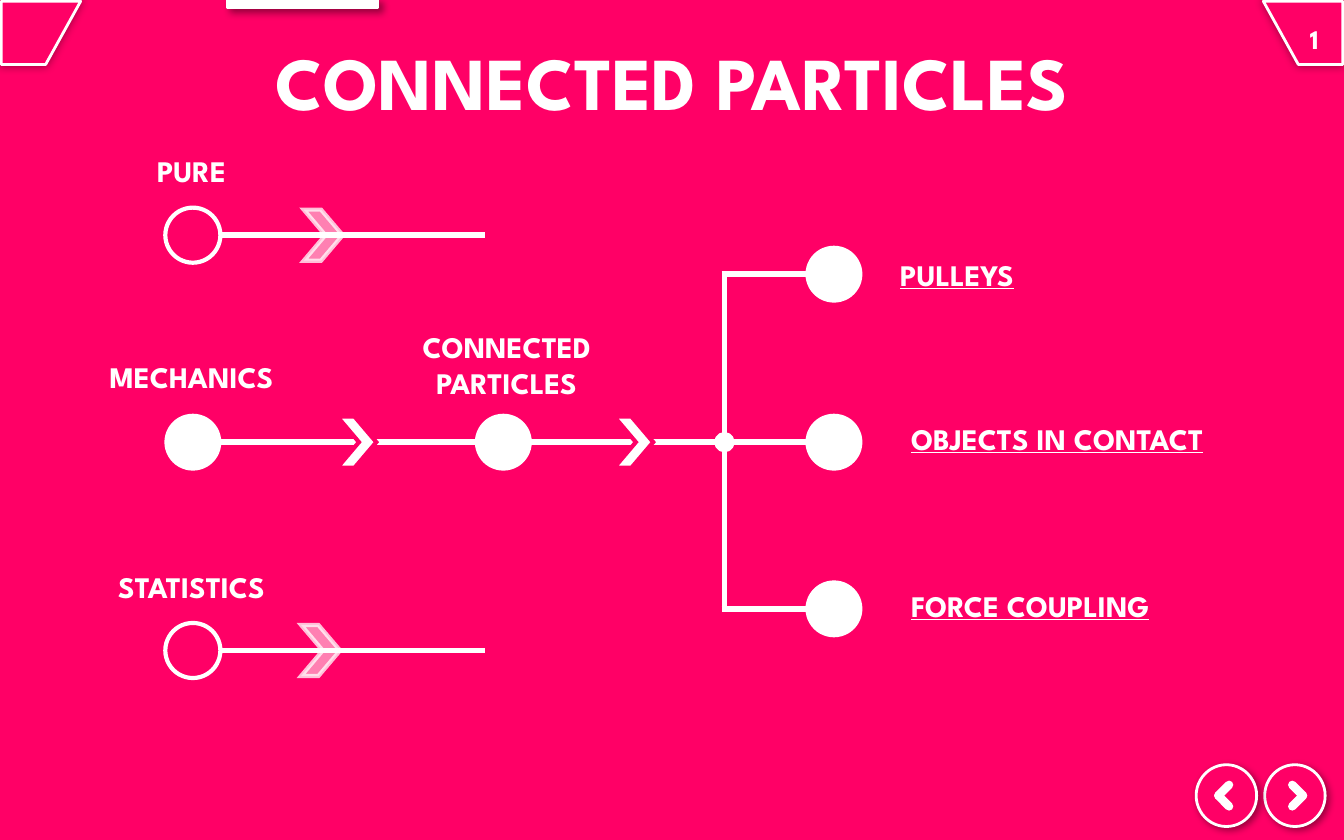
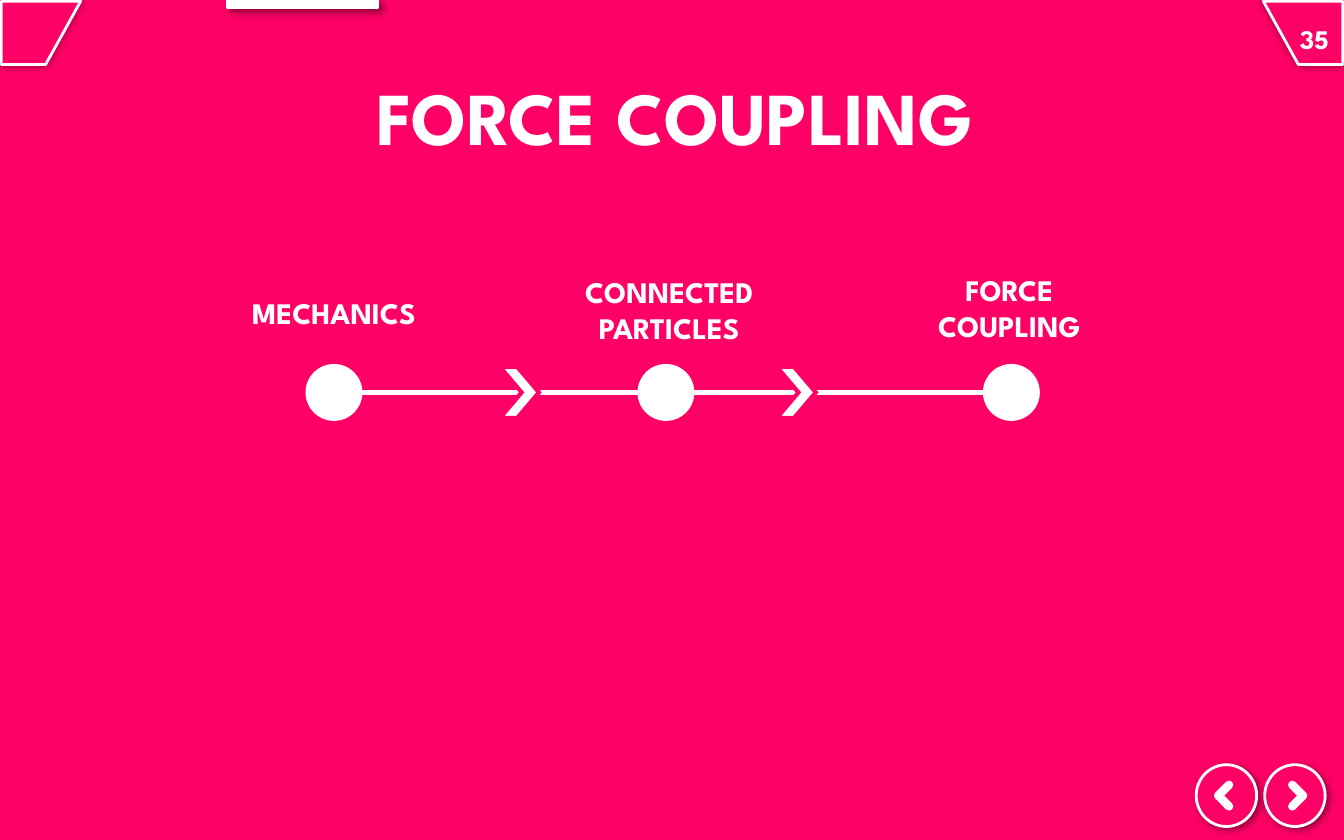
from lxml.etree import SubElement
from pptx import Presentation
from pptx.dml.color import RGBColor
from pptx.enum.shapes import MSO_CONNECTOR, MSO_SHAPE
from pptx.enum.text import MSO_ANCHOR, MSO_AUTO_SIZE, PP_ALIGN
from pptx.oxml.ns import qn
from pptx.util import Inches, Pt

WIDTH, HEIGHT = 10, 6.25
PINK, WHITE, BLACK = "FF0066", "FFFFFF", "000000"
FONT = "League Spartan"
NODE = 0.41
CHEVRON = (0.29, 0.38)
LABEL_HEIGHT = 0.37
TWO_LINES = 0.64

MAP = {
    "number": "1",
    "title": ("CONNECTED PARTICLES", 1.77, 0.41),
    "row": 3.29,
    "stations": [
        ("MECHANICS", 1.23, 0.6, 1.65, LABEL_HEIGHT, 0.67),
        ("CONNECTED PARTICLES", 3.54, 2.87, 1.8, TWO_LINES, 0.89),
    ],
    "chevrons": [2.51, 4.57],
}
SIDE_TOPICS = [("PURE", 1.75, 2.26), ("STATISTICS", 4.84, 2.24)]
SIDE_LIFT = 0.66
SIDE_END = 3.61
BRANCHES = [
    ("PULLEYS", 2.04, 6.6, 1.86, 1.8),
    ("OBJECTS IN CONTACT", 3.29, 6.68, 3.08, 2.65),
    ("FORCE COUPLING", 4.53, 6.68, 4.32, 2.25),
]
TRUNK, BRANCH_NODE = 5.39, 6

PATH = {
    "number": "35",
    "title": ("FORCE COUPLING", 1.79, 0.67),
    "row": 2.92,
    "stations": [
        ("MECHANICS", 2.28, 1.66, 1.65, LABEL_HEIGHT, 0.78),
        ("CONNECTED PARTICLES", 4.75, 4.08, 1.8, TWO_LINES, 0.93),
        ("FORCE COUPLING", 7.32, 6.77, 1.48, TWO_LINES, 0.95),
    ],
    "chevrons": [3.72, 5.78],
}

FLAG_HUNDREDTHS = [(1, 1), (1, 48), (34, 48), (60, 1)]
BUTTONS = [(9.41, 1), (8.9, -1)]
BUTTON_SIZE = (0.45, 0.46)
BUTTON_ROW = 5.92


def color(hex_string):
    return RGBColor.from_string(hex_string)


def add_alpha(color_element, percent):
    SubElement(color_element, qn("a:alpha"), val=str(percent * 1000))


def paint(shape, fill, line, line_width, shadow=None):
    shape.shadow.inherit = False
    shape.fill.solid()
    shape.fill.fore_color.rgb = color(fill)
    shape.line.color.rgb = color(line)
    shape.line.width = Pt(line_width)
    if shadow:
        blur, distance, angle = shadow
        effects = shape._element.spPr.find(qn("a:effectLst"))
        outer = SubElement(effects, qn("a:outerShdw"), blurRad=str(Pt(blur)),
                           dist=str(Pt(distance)), dir=str(angle * 60000),
                           algn="ctr", rotWithShape="0")
        add_alpha(SubElement(outer, qn("a:srgbClr"), val=BLACK), 40)


def add_preset(slide, kind, left, top, width, height):
    return slide.shapes.add_shape(kind, Inches(left), Inches(top),
                                  Inches(width), Inches(height))


def add_circle(slide, left, row, width=NODE, height=NODE, fill=WHITE,
               line_width=1, shadow=None):
    shape = add_preset(slide, MSO_SHAPE.OVAL, left, row - height / 2, width, height)
    paint(shape, fill, WHITE, line_width, shadow)


def add_line(slide, start, end, width=3, round_cap=False):
    connector = slide.shapes.add_connector(
        MSO_CONNECTOR.STRAIGHT, *(Inches(value) for value in start + end))
    connector.line.color.rgb = color(WHITE)
    connector.line.width = Pt(width)
    if round_cap:
        connector.line._get_or_add_ln().set("cap", "rnd")
    SubElement(connector._element.spPr, qn("a:effectLst"))


def add_chevron(slide, left, row, faint=False):
    width, height = CHEVRON
    shape = add_preset(slide, MSO_SHAPE.CHEVRON, left, row - height / 2, width, height)
    shape.adjustments[0] = 0.555
    paint(shape, WHITE, WHITE if faint else PINK, 2.25)
    SubElement(shape.line._get_or_add_ln(), qn("a:miter"), lim="800000")
    if faint:
        fill_color, line_color = shape._element.spPr.iter(qn("a:srgbClr"))
        add_alpha(fill_color, 50)
        add_alpha(line_color, 75)


def add_text(slide, text, left, top, width, height, size=16,
             align=PP_ALIGN.CENTER, underline=None):
    box = slide.shapes.add_textbox(Inches(left), Inches(top), Inches(width), Inches(height))
    text_frame = box.text_frame
    text_frame.word_wrap = True
    text_frame.text = text
    paragraph = text_frame.paragraphs[0]
    paragraph.alignment = align
    font = paragraph.runs[0].font
    font.name, font.size, font.bold, font.underline = FONT, Pt(size), True, underline
    font.color.rgb = color(WHITE)
    return text_frame


def add_label(slide, *place, **style):
    add_text(slide, *place, **style).auto_size = MSO_AUTO_SIZE.SHAPE_TO_FIT_TEXT


def add_centred_text(slide, *place):
    text_frame = add_text(slide, *place)
    text_frame.vertical_anchor = MSO_ANCHOR.MIDDLE
    text_frame.margin_left = text_frame.margin_right = 0
    text_frame.margin_top = text_frame.margin_bottom = 0
    return text_frame.paragraphs[0]


def add_frame(slide, number):
    slide.background.fill.solid()
    slide.background.fill.fore_color.rgb = color(PINK)
    mirrored = [(WIDTH * 100 - x, y) for x, y in FLAG_HUNDREDTHS]
    for points in (mirrored, FLAG_HUNDREDTHS):
        builder = slide.shapes.build_freeform(*points[0], scale=Inches(0.01))
        builder.add_line_segments(points[1:], close=True)
        paint(builder.convert_to_shape(), PINK, WHITE, 1.5, (5, 0, 0))
    paragraph = add_centred_text(slide, number, 9.56, 0.02, 0.44, 0.5, 18)
    paragraph.runs[0].font._element.set("cap", "small")
    tab = add_preset(slide, MSO_SHAPE.RECTANGLE, 1.69, 0, 1.12, 0.06)
    paint(tab, WHITE, WHITE, 1.5, (4, 3, 45))
    for left, direction in BUTTONS:
        add_circle(slide, left, BUTTON_ROW, *BUTTON_SIZE, PINK, 1.5, (4, 2, 45))
        centre = left + BUTTON_SIZE[0] / 2
        tip = (centre + 0.06 * direction, BUTTON_ROW)
        for rise in (-0.08, 0.08):
            add_line(slide, (centre - 0.02 * direction, BUTTON_ROW + rise), tip, 4.5, True)


def add_title(slide, text, left, top):
    add_centred_text(slide, text, left, top, 6.46, 0.47, 40).line_spacing = 0.9


def add_station(slide, text, node_left, row, label_left, width, height, lift, **style):
    add_label(slide, text, label_left, row - lift, width, height)
    add_circle(slide, node_left, row, **style)


def add_route(slide, content, end=None):
    row, stations = content["row"], content["stations"]
    stops = [left for _, left, *_ in stations]
    ends = stops[1:] + ([end] if end else [])
    for start, finish in zip(stops, ends):
        add_line(slide, (start + NODE, row), (finish, row))
    for left in content["chevrons"]:
        add_chevron(slide, left, row)
    for text, left, *label in stations:
        add_station(slide, text, left, row, *label)


def add_side_topics(slide):
    _, left, label_left, width, height, _ = MAP["stations"][0]
    for text, row, chevron_left in SIDE_TOPICS:
        add_line(slide, (left + NODE, row), (SIDE_END, row))
        add_chevron(slide, chevron_left, row, faint=True)
        add_station(slide, text, left, row, label_left, width, height, SIDE_LIFT,
                    fill=PINK, line_width=2.25)


def add_branches(slide, row):
    for text, branch_row, left, top, width in BRANCHES:
        if branch_row != row:
            add_line(slide, (TRUNK, row), (TRUNK, branch_row))
        add_line(slide, (TRUNK - 0.02, branch_row), (BRANCH_NODE, branch_row))
        add_circle(slide, BRANCH_NODE, branch_row)
        add_label(slide, text, left, top, width, LABEL_HEIGHT,
                  align=PP_ALIGN.LEFT, underline=True)
    add_circle(slide, TRUNK - 0.06, row, 0.12, 0.12, line_width=2.25)


def add_slide(presentation, content, end=None):
    slide = presentation.slides.add_slide(presentation.slide_layouts[6])
    add_frame(slide, content["number"])
    add_route(slide, content, end)
    add_title(slide, *content["title"])
    return slide


def main():
    presentation = Presentation()
    presentation.slide_width, presentation.slide_height = Inches(WIDTH), Inches(HEIGHT)
    map_slide = add_slide(presentation, MAP, TRUNK)
    add_side_topics(map_slide)
    add_branches(map_slide, MAP["row"])
    add_slide(presentation, PATH)
    presentation.save("out.pptx")


if __name__ == "__main__":
    main()
